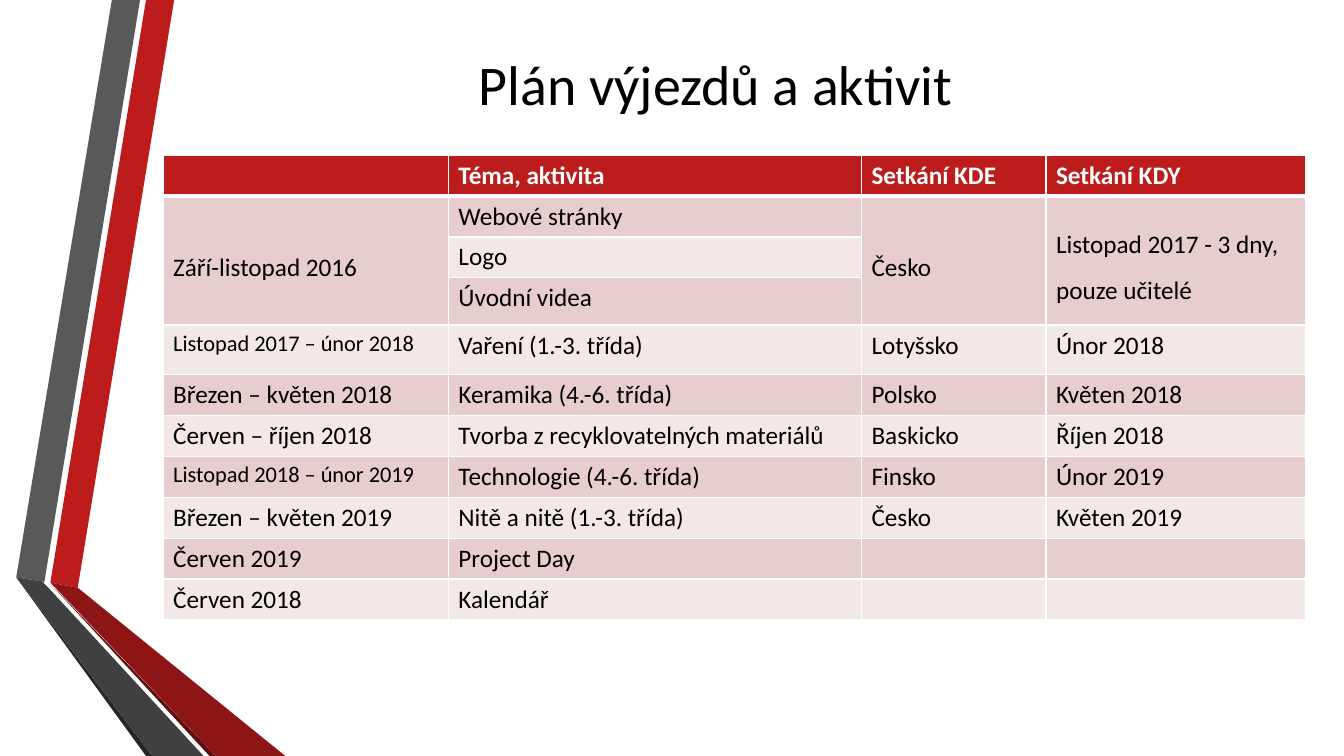
from dataclasses import dataclass

from lxml.etree import SubElement
from pptx import Presentation
from pptx.dml.color import RGBColor
from pptx.enum.text import MSO_ANCHOR, PP_ALIGN
from pptx.oxml.ns import qn
from pptx.util import Cm, Pt


@dataclass(frozen=True)
class Theme:
    """Colours, font and type sizes of the slide."""
    font: str = "Calibri"
    title_size: int = 40
    body_size: int = 18
    small_size: int = 16
    black: str = "000000"
    white: str = "FFFFFF"
    red: str = "BC1C1C"
    red_dark: str = "8D1515"
    red_edge: str = "5E0E0E"
    grey: str = "595959"
    grey_dark: str = "404040"
    grey_edge: str = "262626"
    bands: tuple = ("E7CDCD", "F3E8E8")


THEME = Theme()
BOTTOM = 19.05

RIBBONS = [
    (THEME.red, [(1.27, 14.68), (1.96, 14.81), (4.39, 0), (3.68, 0)]),
    (THEME.grey, [(3.53, 0), (2.82, 0), (0.41, 14.55), (1.12, 14.66)]),
    (THEME.grey_edge, [(0.41, 14.55), (3.68, BOTTOM), (3.84, BOTTOM)]),
    (THEME.red_edge, [(1.27, 14.71), (5.28, BOTTOM), (5.44, BOTTOM)]),
    (THEME.red_dark, [(1.27, 14.68), (5.44, BOTTOM), (7.19, BOTTOM), (1.96, 14.81)]),
    (THEME.grey_dark, [(5.13, BOTTOM), (1.22, 14.81), (1.09, 14.68), (1.12, 14.66),
                       (0.41, 14.55), (3.84, BOTTOM)]),
]

PLAN = [
    ("", "Téma, aktivita", "Setkání KDE", "Setkání KDY"),
    ("Září-listopad 2016", "Webové stránky", "Česko", "Listopad 2017 - 3 dny, pouze učitelé"),
    ("", "Logo", "", ""),
    ("", "Úvodní videa", "", ""),
    ("Listopad 2017 – únor 2018", "Vaření (1.-3. třída)", "Lotyšsko", "Únor 2018"),
    ("Březen – květen 2018", "Keramika (4.-6. třída)", "Polsko", "Květen 2018"),
    ("Červen – říjen 2018", "Tvorba z recyklovatelných materiálů", "Baskicko", "Říjen 2018"),
    ("Listopad 2018 – únor 2019", "Technologie (4.-6. třída)", "Finsko", "Únor 2019"),
    ("Březen – květen 2019", "Nitě a nitě (1.-3. třída)", "Česko", "Květen 2019"),
    ("Červen 2019", "Project Day", "", ""),
    ("Červen 2018", "Kalendář", "", ""),
]
COLUMN_WIDTHS = [7.19, 10.41, 4.65, 6.53]
ROW_HEIGHTS = [1.03] * 3 + [1.19, 1.25] + [1.03] * 6
MERGED_COLUMNS = (0, 2, 3)
MERGED_ROWS = (1, 3)


def write_text(frame, text, *, size, color, font, bold=False,
               align=PP_ALIGN.LEFT, spacing=1.0):
    """Write one formatted paragraph into a text frame."""
    para = frame.paragraphs[0]
    para.alignment = align
    para.line_spacing = spacing
    span = para.add_run()
    span.text = text
    span.font.name = font
    span.font.size = Pt(size)
    span.font.bold = bold
    span.font.color.rgb = RGBColor.from_string(color)


def set_borders(cell, color, **widths):
    """Draw the cell borders, with widths in points keyed by side."""
    properties = cell._tc.get_or_add_tcPr()
    for position, (side, width) in enumerate(widths.items()):
        line = SubElement(properties, qn(f"a:ln{side}"), w=str(Pt(width)))
        fill = SubElement(line, qn("a:solidFill"))
        SubElement(fill, qn("a:srgbClr"), val=color)
        properties.insert(position, line)


class SlideBuilder:
    """Hold the theme and the current slide."""

    def __init__(self, page, theme):
        """Keep the page to draw on and its theme."""
        self.page = page
        self.theme = theme

    def ribbon(self, color, points):
        """Draw a filled outline through points given in centimetres."""
        corners = [(Cm(x), Cm(y)) for x, y in points]
        builder = self.page.shapes.build_freeform(*corners[0])
        builder.add_line_segments(corners[1:], close=True)
        shape = builder.convert_to_shape()
        shape.shadow.inherit = False
        shape.fill.solid()
        shape.fill.fore_color.rgb = RGBColor.from_string(color)
        shape.line.fill.background()

    def title(self, text, left, top, width, height):
        """Add the centred title."""
        box = self.page.shapes.add_textbox(Cm(left), Cm(top), Cm(width), Cm(height))
        frame = box.text_frame
        frame.word_wrap = True
        frame.vertical_anchor = MSO_ANCHOR.MIDDLE
        write_text(frame, text, size=self.theme.title_size, color=self.theme.black,
                   font=self.theme.font, align=PP_ALIGN.CENTER)

    def cell(self, cell, text, row, column):
        """Fill, border and write one table cell."""
        theme = self.theme
        header = row == 0
        merged = row == MERGED_ROWS[0] and column in MERGED_COLUMNS
        band = 0 if column in MERGED_COLUMNS and row <= MERGED_ROWS[1] else (row - 1) % 2
        cell.fill.solid()
        cell.fill.fore_color.rgb = RGBColor.from_string(
            theme.red if header else theme.bands[band])
        set_borders(cell, theme.white, L=1, R=1, T=3 if row == 1 else 1, B=3 if header else 1)
        if merged:
            cell.vertical_anchor = MSO_ANCHOR.MIDDLE
        if text:
            write_text(cell.text_frame, text, font=theme.font, bold=header,
                       size=theme.small_size if text.startswith("Listopad") and column == 0
                       else theme.body_size,
                       color=theme.white if header else theme.black,
                       spacing=1.5 if merged else 1.0)

    def table(self, rows, left, top):
        """Add the plan table with its merged first period."""
        table = self.page.shapes.add_table(
            len(rows), len(COLUMN_WIDTHS), Cm(left), Cm(top),
            Cm(sum(COLUMN_WIDTHS)), Cm(sum(ROW_HEIGHTS))).table
        for column, width in zip(table.columns, COLUMN_WIDTHS):
            column.width = Cm(width)
        for row, height in zip(table.rows, ROW_HEIGHTS):
            row.height = Cm(height)
        first, last = MERGED_ROWS
        for column in MERGED_COLUMNS:
            table.cell(first, column).merge(table.cell(last, column))
        for row, texts in enumerate(rows):
            for column, text in enumerate(texts):
                self.cell(table.cell(row, column), text, row, column)


def main():
    """Build the slide and save it."""
    deck = Presentation()
    deck.slide_width, deck.slide_height = Cm(33.87), Cm(BOTTOM)
    page = deck.slides.add_slide(deck.slide_layouts[6])
    slide = SlideBuilder(page, THEME)
    for color, points in RIBBONS:
        slide.ribbon(color, points)
    slide.title("Plán výjezdů a aktivit", 4.11, 0.3, 27.84, 3.61)
    slide.table(PLAN, 4.11, 3.91)
    deck.save("out.pptx")


if __name__ == "__main__":
    main()
